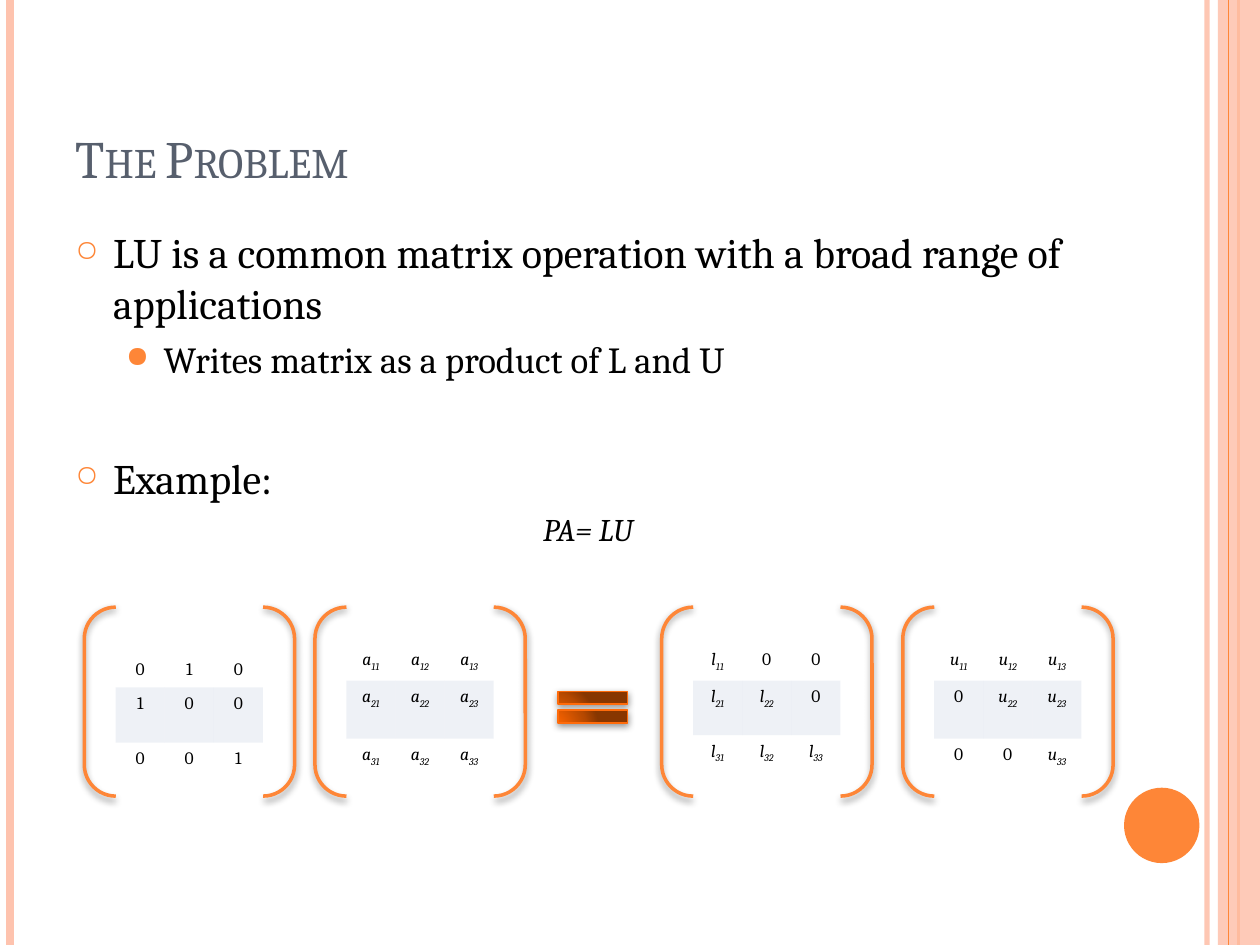
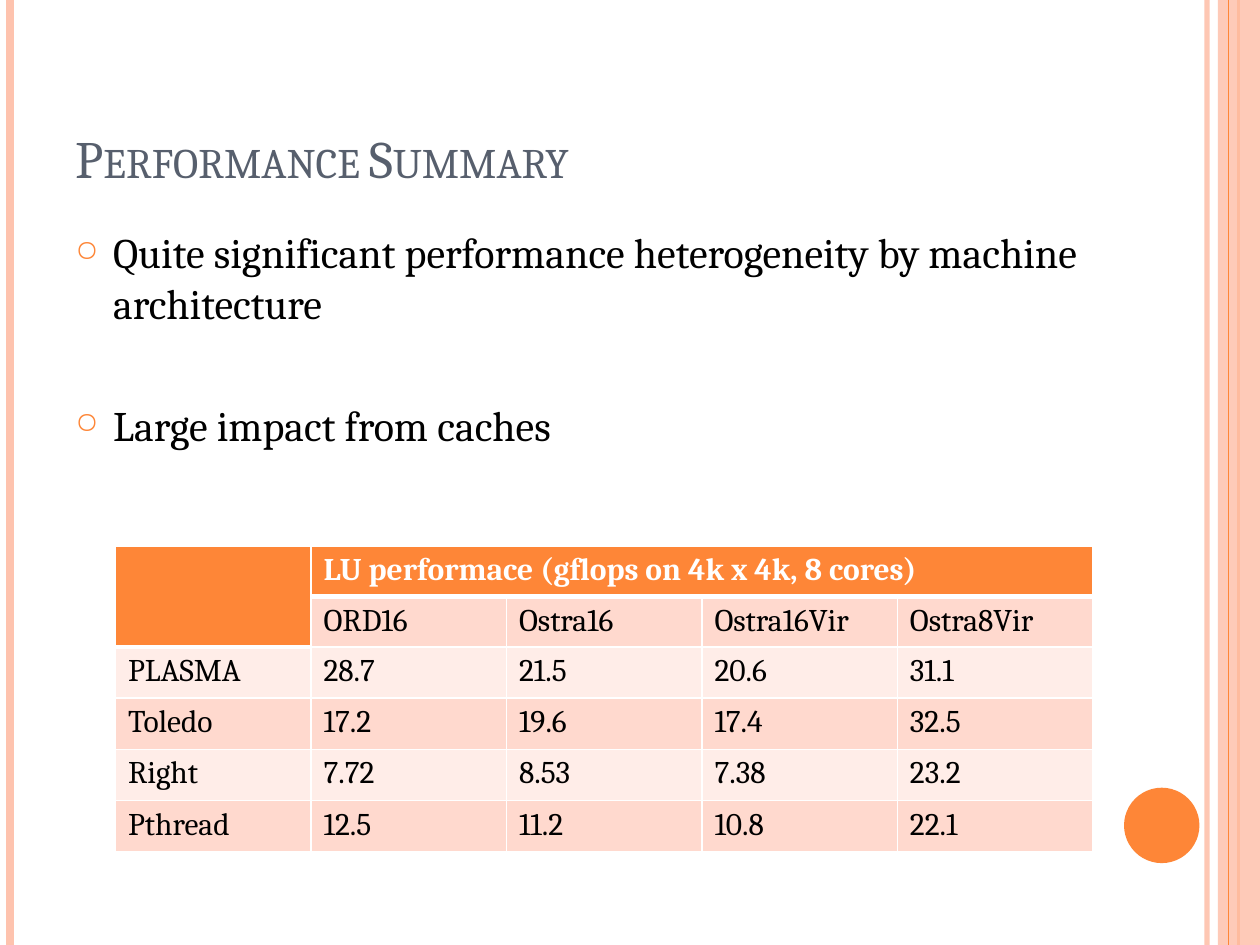
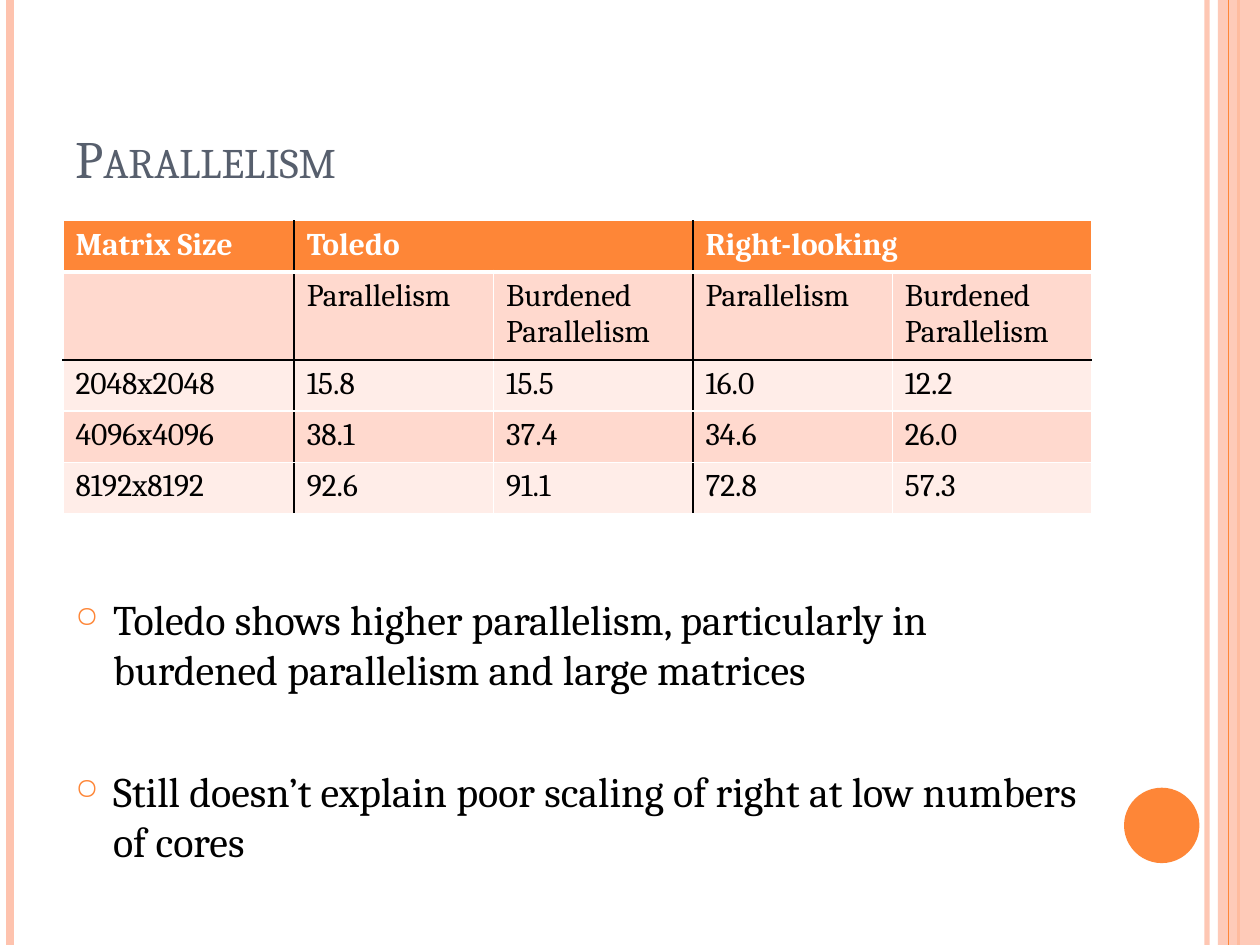
from lxml import etree
from pptx import Presentation
from pptx.dml.color import RGBColor
from pptx.enum import shapes, text
from pptx.oxml import parse_xml
from pptx.oxml.ns import nsdecls, qn
from pptx.util import Cm, Pt

FONT = "Cambria"
HEX = {
    "orange": "FE8637", "peach": "FEC3AE", "slate": "575F6D",
    "black": "000000", "white": "FFFFFF", "mist": "AEBAD5",
    "dark": "FFD9CE", "pale": "FFEDE8", "rim": "FF6B0A",
}
GLOW = [(0, "FD6400"), (30, "F46100"), (75, "B74900"), (100, "873600")]

# Bullets: (level, space before in points, words)
TIGHT, LOOSE = 6, 41
PROBLEM = [
    (0, TIGHT, "LU is a common matrix operation with a broad range of applications"),
    (1, 5, "Writes matrix as a product of L and U"),
    (0, LOOSE, "Example:"),
]
SUMMARY = [
    (0, TIGHT, "Quite significant performance heterogeneity by machine architecture"),
    (0, LOOSE, "Large impact from caches"),
]
FINDINGS = [
    (0, TIGHT, "Toledo shows higher parallelism, particularly in burdened "
               "parallelism and large matrices"),
    (0, LOOSE, "Still doesn’t explain poor scaling of right at low numbers of cores"),
]
LEVELS = [  # size, left margin in cm, bullet, bullet size in percent
    (24, 0.76, "○", 70),
    (21, 1.78, "●", 80),
]

# Matrices: left of brackets, top of cells, row heights, entries
MATRICES = [
    (1.7, 13.18, (0.66, 1.11, 0.66), ["0 1 0", "1 0 0", "0 0 1"]),
    (6.35, 12.98, (0.74, 1.17, 0.74), ["a11 a12 a13", "a21 a22 a23", "a31 a32 a33"]),
    (13.34, 12.98, (0.74, 1.1, 0.74), ["l11 0 0", "l21 l22 0", "l31 l32 l33"]),
    (18.2, 12.98, (0.74, 1.17, 0.74), ["u11 u12 u13", "0 u22 u23", "0 0 u33"]),
]

SPEEDS = [
    ["", "LU performace (gflops on 4k x 4k, 8 cores)", "", "", ""],
    ["", "ORD16", "Ostra16", "Ostra16Vir", "Ostra8Vir"],
    ["PLASMA", "28.7", "21.5", "20.6", "31.1"],
    ["Toledo", "17.2", "19.6", "17.4", "32.5"],
    ["Right", "7.72", "8.53", "7.38", "23.2"],
    ["Pthread", "12.5", "11.2", "10.8", "22.1"],
]
SCALING = [
    ["Matrix Size", "Toledo", "", "Right-looking", ""],
    ["", "Parallelism", "Burdened Parallelism", "Parallelism", "Burdened Parallelism"],
    ["2048x2048", "15.8", "15.5", "16.0", "12.2"],
    ["4096x4096", "38.1", "37.4", "34.6", "26.0"],
    ["8192x8192", "92.6", "91.1", "72.8", "57.3"],
]


def rgb(name):
    return RGBColor.from_string(HEX[name])


def fade(node, share):
    """Make every plain colour below node see-through."""
    for tint in node.iter(qn("a:srgbClr")):
        etree.SubElement(tint, qn("a:alpha"), val=str(share * 1000))


def style(run, size, color="black", bold=False, italic=False):
    font = run.font
    font.name, font.size, font.bold, font.italic = FONT, Pt(size), bold, italic
    font.color.rgb = rgb(color)


def rule(slide, x, width, color, share=100):
    line = slide.shapes.add_connector(
        shapes.MSO_CONNECTOR.STRAIGHT, Cm(x), 0, Cm(x), Cm(19.05))
    line.line.width = Pt(width)
    line.line.color.rgb = rgb(color)
    etree.SubElement(line._element.spPr, qn("a:effectLst"))
    if share < 100:
        fade(line._element.spPr, share)


def shape(slide, kind, box, fill=None, line=None, width=1):
    part = slide.shapes.add_shape(kind, *map(Cm, box))
    part.shadow.inherit = False
    if fill:
        part.fill.solid()
        part.fill.fore_color.rgb = rgb(fill)
    else:
        part.fill.background()
    if line:
        part.line.color.rgb = rgb(line)
        part.line.width = Pt(width)
    else:
        part.line.fill.background()
    return part


def shade(part, share, dist):
    """Drop a soft shadow straight down."""
    part._element.spPr.find(qn("a:effectLst")).append(parse_xml(
        f'<a:outerShdw {nsdecls("a")} blurRad="{Pt(4)}" dist="{Pt(dist)}" '
        f'dir="5400000" rotWithShape="0"><a:srgbClr val="{HEX["black"]}">'
        f'<a:alpha val="{share * 1000}"/></a:srgbClr></a:outerShdw>'))


def words(slide, box):
    frame = slide.shapes.add_textbox(*map(Cm, box)).text_frame
    frame.word_wrap = True
    return frame


def page(deck, title):
    """Add a slide with the shared bands, disc and title."""
    slide = deck.slides.add_slide(deck.slide_layouts[6])
    rule(slide, 24.33, 3, "peach", 93)
    rule(slide, 0.21, 4.5, "peach")
    rule(slide, 24.97, 1.5, "orange")
    band = shape(slide, shapes.MSO_SHAPE.RECTANGLE, (24.55, 0, 0.85, 19.05), "peach")
    fade(band._element.spPr, 87)
    rule(slide, 24.77, 0.75, "orange")
    shape(slide, shapes.MSO_SHAPE.OVAL, (22.66, 15.88, 1.52, 1.52), "orange")
    frame = words(slide, (1.27, 0.76, 20.75, 3.18))
    frame.vertical_anchor = text.MSO_ANCHOR.BOTTOM
    frame.text = title
    run = frame.paragraphs[0].runs[0]
    style(run, 30, "slate")
    run._r.get_or_add_rPr().set("cap", "small")
    return slide


def bullets(slide, items, top=4.45):
    frame = words(slide, (1.27, top, 20.75, 17.99 - top))
    frame.text = "\n".join(item[2] for item in items)
    for para, (level, gap, _) in zip(frame.paragraphs, items):
        size, left, mark, scale = LEVELS[level]
        style(para.runs[0], size)
        para.level = level
        para.space_before = Pt(gap)
        props = para._p.get_or_add_pPr()
        props.set("marL", str(Cm(left)))
        props.set("indent", str(-Cm(0.76)))
        tint = etree.SubElement(props, qn("a:buClr"))
        etree.SubElement(tint, qn("a:srgbClr"), val=HEX["orange"])
        etree.SubElement(props, qn("a:buSzPct"), val=str(scale * 1000))
        etree.SubElement(props, qn("a:buChar"), char=mark)


def grid(slide, left, top, cols, rows):
    """Add a table with no style of its own."""
    frame = slide.shapes.add_table(
        len(rows), len(cols), Cm(left), Cm(top), Cm(sum(cols)), Cm(sum(rows)))
    table = frame.table
    table._tbl.tblPr.find(qn("a:tableStyleId")).text = (
        "{2D5ABB26-0587-4C30-8999-92F81FD0307C}")
    for col, width in zip(table.columns, cols):
        col.width = Cm(width)
    for row, height in zip(table.rows, rows):
        row.height = Cm(height)
    return table


def matrix(slide, left, top, rows, lines):
    pair = shape(slide, shapes.MSO_SHAPE.DOUBLE_BRACKET,
                 (left, 12.24, 4.24, 3.81), line="orange", width=2)
    shade(pair, 40, 2)
    table = grid(slide, left + 0.63, top, [0.99] * 3, rows)
    for r, line in enumerate(lines):
        for c, entry in enumerate(line.split()):
            cell = table.cell(r, c)
            para = cell.text_frame.paragraphs[0]
            para.alignment = text.PP_ALIGN.CENTER
            para.text = entry[0]
            style(para.runs[0], 10, italic=entry[0].isalpha())
            if entry[1:]:
                index = para.add_run()
                index.text = entry[1:]
                style(index, 10, italic=True)
                index._r.get_or_add_rPr().set("baseline", "-25000")
            if r == 1:
                cell.fill.solid()
                cell.fill.fore_color.rgb = rgb("mist")
                fade(cell._tc.tcPr, 20)


def edge(cell, side, color, width):
    line = etree.SubElement(
        cell._tc.get_or_add_tcPr(), qn("a:ln" + side), w=str(Pt(width)))
    fill = etree.SubElement(line, qn("a:solidFill"))
    etree.SubElement(fill, qn("a:srgbClr"), val=HEX[color])


def results(slide, data, left, top, cols, rows, merges, walls=(), floors=()):
    """Fill a banded table; walls and floors are the black grid lines."""
    table = grid(slide, left, top, cols, rows)
    for r1, c1, r2, c2 in merges:
        table.cell(r1, c1).merge(table.cell(r2, c2))
    for r, row in enumerate(data):
        for c, value in enumerate(row):
            cell = table.cell(r, c)
            if cell.is_spanned:
                continue
            right, low = c + 1, r + 1
            if cell.is_merge_origin:
                right, low = c + cell.span_width, r + cell.span_height
            for side, at, dark in (("L", c, walls), ("R", right, walls),
                                   ("T", r, floors), ("B", low, floors)):
                thick = side == "B" and r == 0
                edge(cell, side, "black" if at in dark else "white", 3 if thick else 1)
            cell.fill.solid()
            cell.fill.fore_color.rgb = rgb(
                "orange" if r == 0 else "dark" if r % 2 else "pale")
            if value:
                cell.text_frame.text = value
                style(cell.text_frame.paragraphs[0].runs[0], 18,
                      "black" if r else "white", bold=r == 0)


def equals(slide):
    sign = shape(slide, shapes.MSO_SHAPE.MATH_EQUAL, (11, 13.72, 1.9, 1.07),
                 fill="orange", line="rim")
    stops = "".join(f'<a:gs pos="{at * 1000}"><a:srgbClr val="{tint}"/></a:gs>'
                    for at, tint in GLOW)
    props = sign._element.spPr
    props.replace(props.find(qn("a:solidFill")), parse_xml(
        f'<a:gradFill {nsdecls("a")} rotWithShape="1"><a:gsLst>{stops}</a:gsLst>'
        '<a:path path="circle"><a:fillToRect l="5000" t="100000" r="120000" '
        'b="10000"/></a:path></a:gradFill>'))
    shade(sign, 42, 1.6)


def main():
    deck = Presentation()
    deck.slide_width, deck.slide_height = Cm(25.4), Cm(19.05)

    slide = page(deck, "The Problem")
    bullets(slide, PROBLEM)
    frame = words(slide, (10.16, 10.16, 3.39, 1.02))
    frame.text = "PA= LU"
    frame.paragraphs[0].alignment = text.PP_ALIGN.CENTER
    style(frame.paragraphs[0].runs[0], 18, italic=True)
    equals(slide)
    for item in MATRICES:
        matrix(slide, *item)

    slide = page(deck, "Performance Summary")
    bullets(slide, SUMMARY)
    results(slide, SPEEDS, 2.33, 11.01, [3.94] * 5, [0.98] * 2 + [1.03] * 4,
            [(0, 0, 1, 0), (0, 1, 0, 4)])

    slide = page(deck, "Parallelism")
    bullets(slide, FINDINGS, top=11.83)
    results(slide, SCALING, 1.27, 4.45, [4.66] + [4.02] * 4,
            [1.03, 1.73] + [1.03] * 3, [(0, 1, 0, 2), (0, 3, 0, 4)],
            walls=(1, 3), floors=(2,))

    deck.save("out.pptx")


if __name__ == "__main__":
    main()
